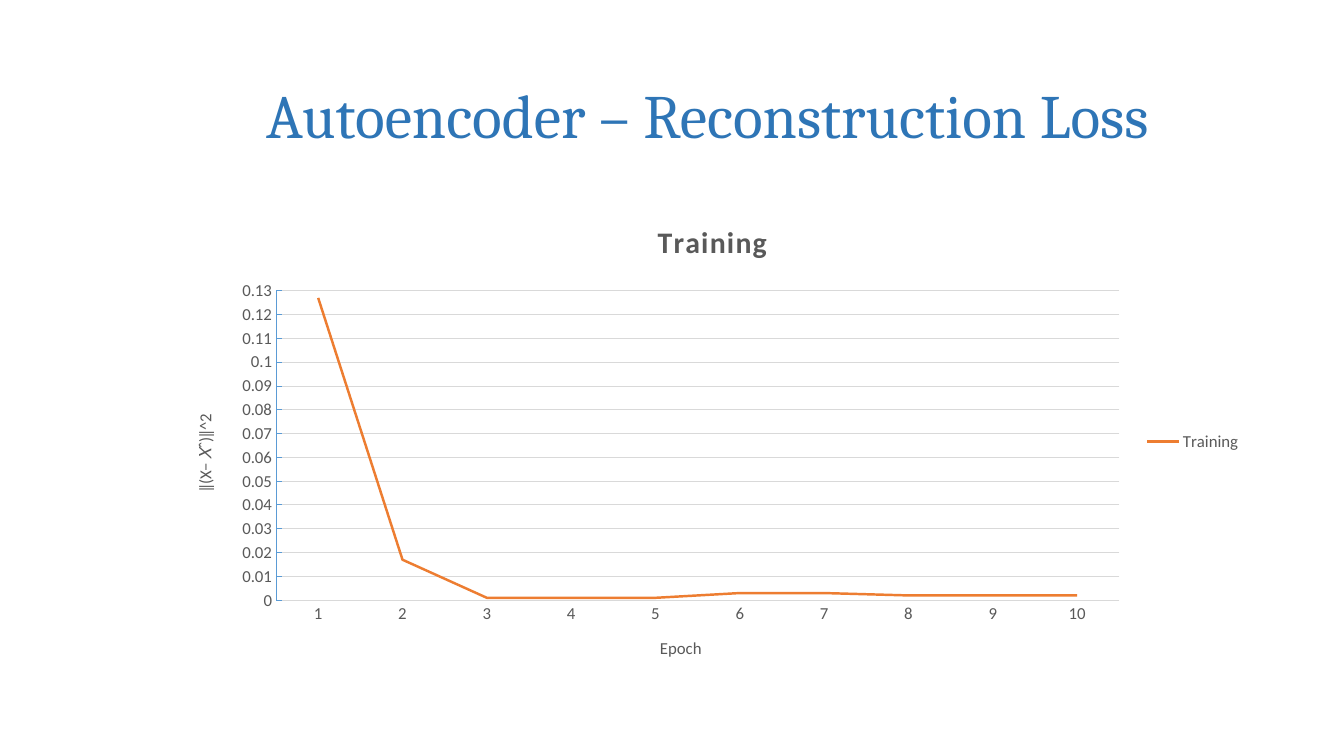
"""Build a slide with a line chart of autoencoder reconstruction loss per epoch."""
from lxml import etree
from pptx import Presentation
from pptx.chart.data import CategoryChartData
from pptx.dml.color import RGBColor
from pptx.enum.chart import XL_CHART_TYPE, XL_LEGEND_POSITION, XL_MARKER_STYLE, XL_TICK_MARK
from pptx.enum.text import MSO_ANCHOR, PP_ALIGN
from pptx.oxml.ns import qn
from pptx.util import Inches, Pt

LINE = XL_CHART_TYPE.LINE
RIGHT = XL_LEGEND_POSITION.RIGHT
NO_MARKER = XL_MARKER_STYLE.NONE
NO_TICK, TICK_IN = XL_TICK_MARK.NONE, XL_TICK_MARK.INSIDE
MIDDLE = MSO_ANCHOR.MIDDLE
LEFT = PP_ALIGN.LEFT

COLORS = {"title": "2E75B6", "text": "595959", "grid": "D9D9D9", "axis": "5B9BD5", "loss": "ED7D31"}
LOSSES = [0.127, 0.017, 0.001, 0.001, 0.001, 0.003, 0.003, 0.002, 0.002, 0.002]


def write(tf, text, size=12, color="text", font="Calibri", bold=False):
    r = tf.paragraphs[0].add_run()
    r.text = text
    r.font.size, r.font.name, r.font.bold = Pt(size), font, bold
    r.font.color.rgb = RGBColor.from_string(COLORS[color])
    return r


def style_line(line, color, width):
    line.color.rgb = RGBColor.from_string(COLORS[color])
    line.width = Pt(width)


prs = Presentation()
prs.slide_width, prs.slide_height = Inches(13.33), Inches(7.5)
s = prs.slides.add_slide(prs.slide_layouts[6])

sp = s.shapes.add_textbox(Inches(2.54), Inches(0.4), Inches(9.88), Inches(1.45))
tf = sp.text_frame
tf.word_wrap = True
tf.vertical_anchor = MIDDLE
tf.paragraphs[0].alignment = LEFT
write(tf, "Autoencoder – Reconstruction Loss", size=44, color="title", font="Cambria")

data = CategoryChartData()
data.categories = [str(epoch) for epoch in range(1, len(LOSSES) + 1)]
data.add_series("Training", LOSSES)
chart = s.shapes.add_chart(LINE, Inches(1.71), Inches(2), Inches(10.71), Inches(4.76), data).chart
chart.font.name, chart.font.size = "Calibri", Pt(12)
chart.font.color.rgb = RGBColor.from_string(COLORS["text"])
chart.has_title = True
r = write(chart.chart_title.text_frame, "Training", size=21.3, bold=True)
r.font._element.set("spc", "100")
chart.chart_title.include_in_layout = False
chart.has_legend = True
chart.legend.position = RIGHT
chart.legend.include_in_layout = False

plot = chart.plots[0]
plot.vary_by_categories = False
series = plot.series[0]
series.smooth = False
series.marker.style = NO_MARKER
style_line(series.format.line, "loss", 1.75)

axes = [
    (chart.category_axis, "Epoch", NO_TICK, "grid", 1),
    (chart.value_axis, "‖(X− 𝑋\u00a0̂)‖^2".replace("\u00a0", " "), TICK_IN, "axis", 0.75),
]
for axis, title, tick, color, width in axes:
    axis.has_title = True
    write(axis.axis_title.text_frame, title)
    axis.major_tick_mark, axis.minor_tick_mark = tick, NO_TICK
    style_line(axis.format.line, color, width)

loss_axis = chart.value_axis
loss_axis.minimum_scale, loss_axis.maximum_scale, loss_axis.major_unit = 0, 0.13, 0.01
loss_axis.has_major_gridlines = True
style_line(loss_axis.major_gridlines.format.line, "grid", 0.75)

area = chart._chartSpace.chart.plotArea
for old in area.findall(qn("c:layout")):
    area.remove(old)
layout = etree.Element(qn("c:layout"))
area.insert(0, layout)
manual = etree.SubElement(layout, qn("c:manualLayout"))
settings = {"layoutTarget": "inner", "xMode": "edge", "yMode": "edge",
            "x": 0.096, "y": 0.186, "w": 0.781, "h": 0.645}
for tag, value in settings.items():
    etree.SubElement(manual, qn(f"c:{tag}")).set("val", str(value))

prs.save("out.pptx")
